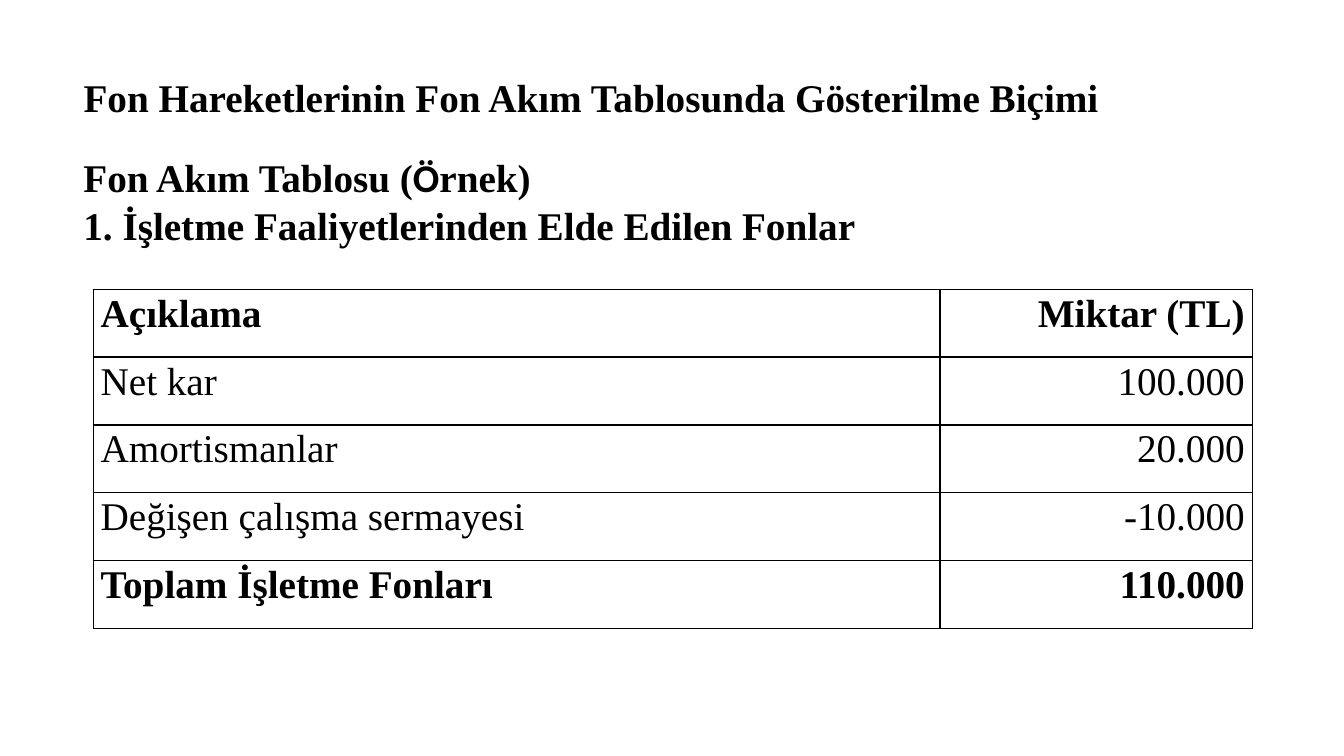
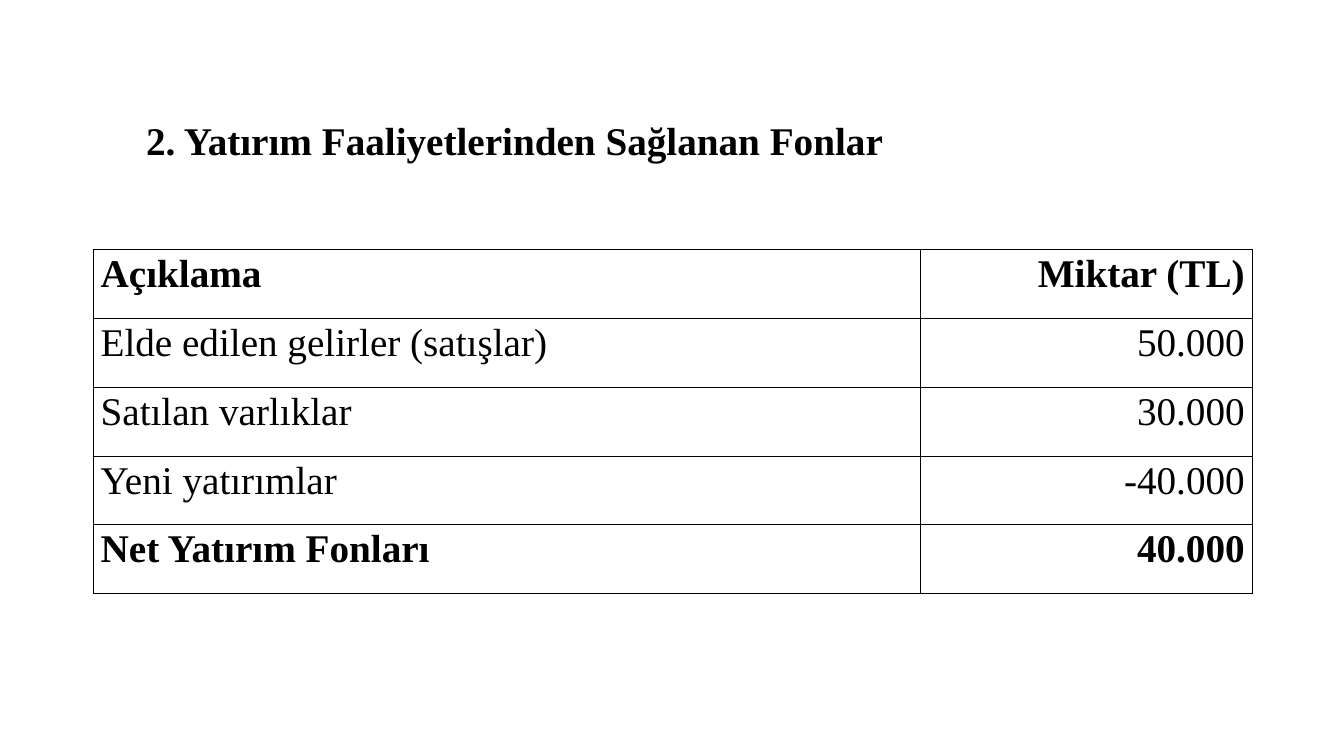
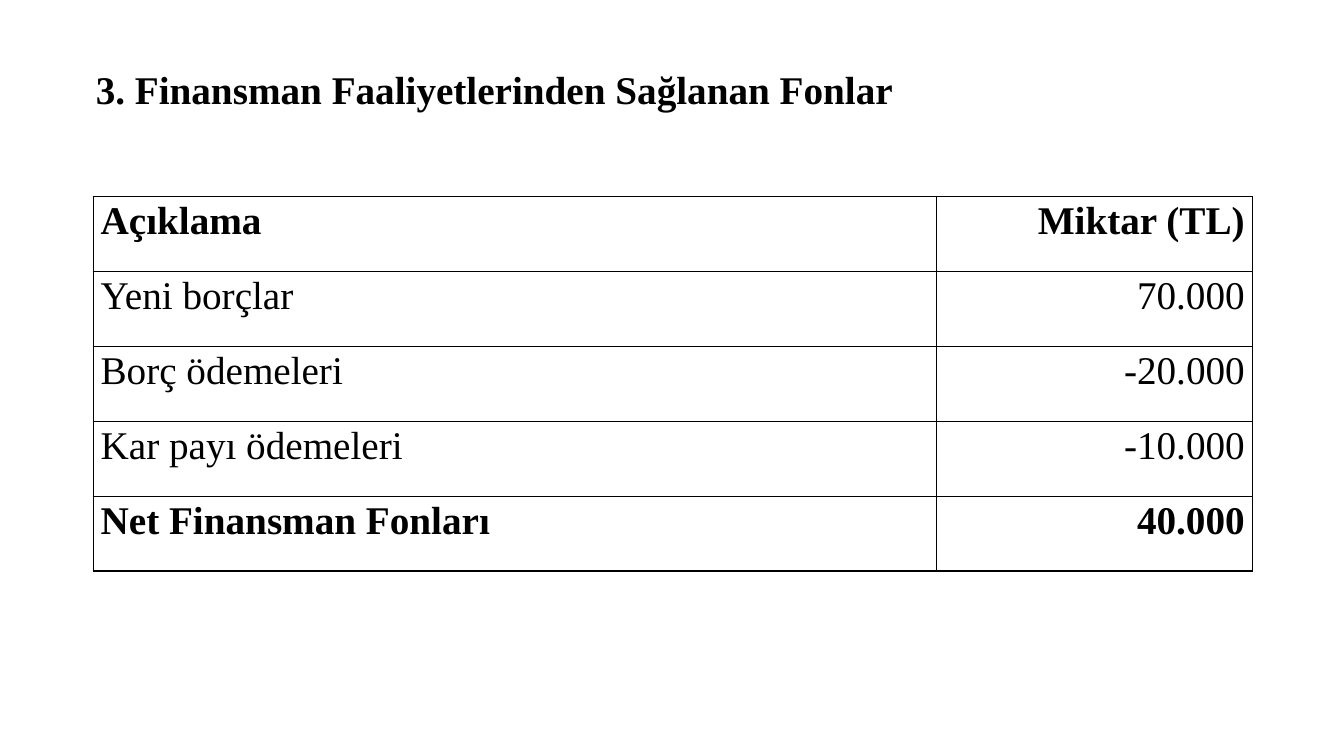
from dataclasses import dataclass

from lxml import etree
from pptx import Presentation
from pptx.dml.color import RGBColor
from pptx.enum.text import MSO_ANCHOR, MSO_AUTO_SIZE, PP_ALIGN
from pptx.oxml.ns import qn
from pptx.util import Pt

LEFT, RIGHT, JUSTIFY = PP_ALIGN.LEFT, PP_ALIGN.RIGHT, PP_ALIGN.JUSTIFY
TOP, MIDDLE = MSO_ANCHOR.TOP, MSO_ANCHOR.MIDDLE
GROW = MSO_AUTO_SIZE.SHAPE_TO_FIT_TEXT
TITLE_ONLY = 5


@dataclass(frozen=True)
class Theme:
    ink: str = "000000"
    paper: str = "FFFFFF"
    font: str = "Times New Roman"
    accent_font: str = "Calibri"
    size: float = 28
    border: float = 1
    table_left: float = 66.5
    table_width: float = 828


def assign(target, values):
    for name, value in values.items():
        setattr(target, name, value)


class Deck:
    def __init__(self, theme):
        self.theme = theme
        self.deck = Presentation()
        assign(self.deck, {"slide_width": Pt(960), "slide_height": Pt(540)})
        background = self.deck.slide_master.background.fill
        background.solid()
        background.fore_color.rgb = RGBColor.from_string(theme.paper)
        self.page = None

    def add_page(self):
        self.page = self.deck.slides.add_slide(self.deck.slide_layouts[TITLE_ONLY])

    def span(self, para, text, bold=True, font=None):
        span = para.add_run()
        span.text = text
        assign(span.font, {"name": font or self.theme.font,
                           "size": Pt(self.theme.size), "bold": bold})
        span.font.color.rgb = RGBColor.from_string(self.theme.ink)

    def place(self, box, left, top, width, height, anchor):
        assign(box, {"left": Pt(left), "top": Pt(top),
                     "width": Pt(width), "height": Pt(height)})
        assign(box.text_frame, {
            "word_wrap": True, "auto_size": GROW, "vertical_anchor": anchor,
            "margin_left": Pt(7.2), "margin_right": Pt(7.2),
            "margin_top": Pt(3.6), "margin_bottom": Pt(3.6)})

    def title(self, text, left, top, width):
        box = self.page.shapes.title
        self.place(box, left, top, width, 41, TOP)
        para = box.text_frame.paragraphs[0]
        para.alignment = LEFT
        self.span(para, text)

    def text(self, lines, left, top, width, height):
        box = self.page.shapes.add_textbox(0, 0, Pt(width), Pt(height))
        self.place(box, left, top, width, height, MIDDLE)
        frame = box.text_frame
        for index, line in enumerate(lines):
            para = frame.add_paragraph() if index else frame.paragraphs[0]
            para.alignment = JUSTIFY
            for text, font in line:
                self.span(para, text, font=font)

    def outline(self, cell):
        properties = cell._tc.get_or_add_tcPr()
        for side in ("a:lnL", "a:lnR", "a:lnT", "a:lnB"):
            line = etree.SubElement(properties, qn(side), w=str(Pt(self.theme.border)))
            fill = etree.SubElement(line, qn("a:solidFill"))
            etree.SubElement(fill, qn("a:srgbClr"), val=self.theme.ink)

    def table(self, entries, top, amount_width, row_height):
        theme = self.theme
        rows = [("Açıklama", "Miktar (TL)"), *entries]
        table = self.page.shapes.add_table(
            len(rows), 2, Pt(theme.table_left), Pt(top),
            Pt(theme.table_width), Pt(row_height * len(rows))).table
        assign(table, {"first_row": False, "horz_banding": False})
        for column, width in zip(table.columns,
                                 (theme.table_width - amount_width, amount_width)):
            column.width = Pt(width)
        for index, row in enumerate(rows):
            table.rows[index].height = Pt(row_height)
            bold = index in (0, len(rows) - 1)
            for column, (text, alignment) in enumerate(zip(row, (JUSTIFY, RIGHT))):
                cell = table.cell(index, column)
                assign(cell, {"margin_left": Pt(5.4), "margin_right": Pt(5.4),
                              "margin_top": 0, "margin_bottom": 0})
                self.outline(cell)
                cell.fill.background()
                para = cell.text_frame.paragraphs[0]
                assign(para, {"alignment": alignment, "line_spacing": 1.07,
                              "space_after": Pt(8)})
                self.span(para, text, bold)


def main():
    theme = Theme()
    deck = Deck(theme)

    deck.add_page()
    deck.title("Fon Hareketlerinin Fon Akım Tablosunda Gösterilme Biçimi", 52.5, 49, 865.5)
    deck.table([("Net kar", "100.000"),
                ("Amortismanlar", "20.000"),
                ("Değişen çalışma sermayesi", "-10.000"),
                ("Toplam İşletme Fonları", "110.000")], 206.6, 223, 48.5)
    deck.text([[("Fon Akım Tablosu (", theme.font), ("Ö", theme.accent_font),
                ("rnek)", theme.font)],
               [("1. İşletme Faaliyetlerinden Elde Edilen Fonlar", theme.font)]],
              52.5, 106, 875.5, 75)

    deck.add_page()
    deck.title("2. Yatırım Faaliyetlerinden Sağlanan Fonlar", 97.2, 79.2, 803.5)
    deck.table([("Elde edilen gelirler (satışlar)", "50.000"),
                ("Satılan varlıklar", "30.000"),
                ("Yeni yatırımlar", "-40.000"),
                ("Net Yatırım Fonları", "40.000")], 178.5, 237, 49.1)

    deck.add_page()
    deck.title("3. Finansman Faaliyetlerinden Sağlanan Fonlar", 61.2, 43.2, 840)
    deck.table([("Yeni borçlar", "70.000"),
                ("Borç ödemeleri", "-20.000"),
                ("Kar payı ödemeleri", "-10.000"),
                ("Net Finansman Fonları", "40.000")], 140.4, 225.4, 53.5)

    deck.deck.save("out.pptx")


if __name__ == "__main__":
    main()
